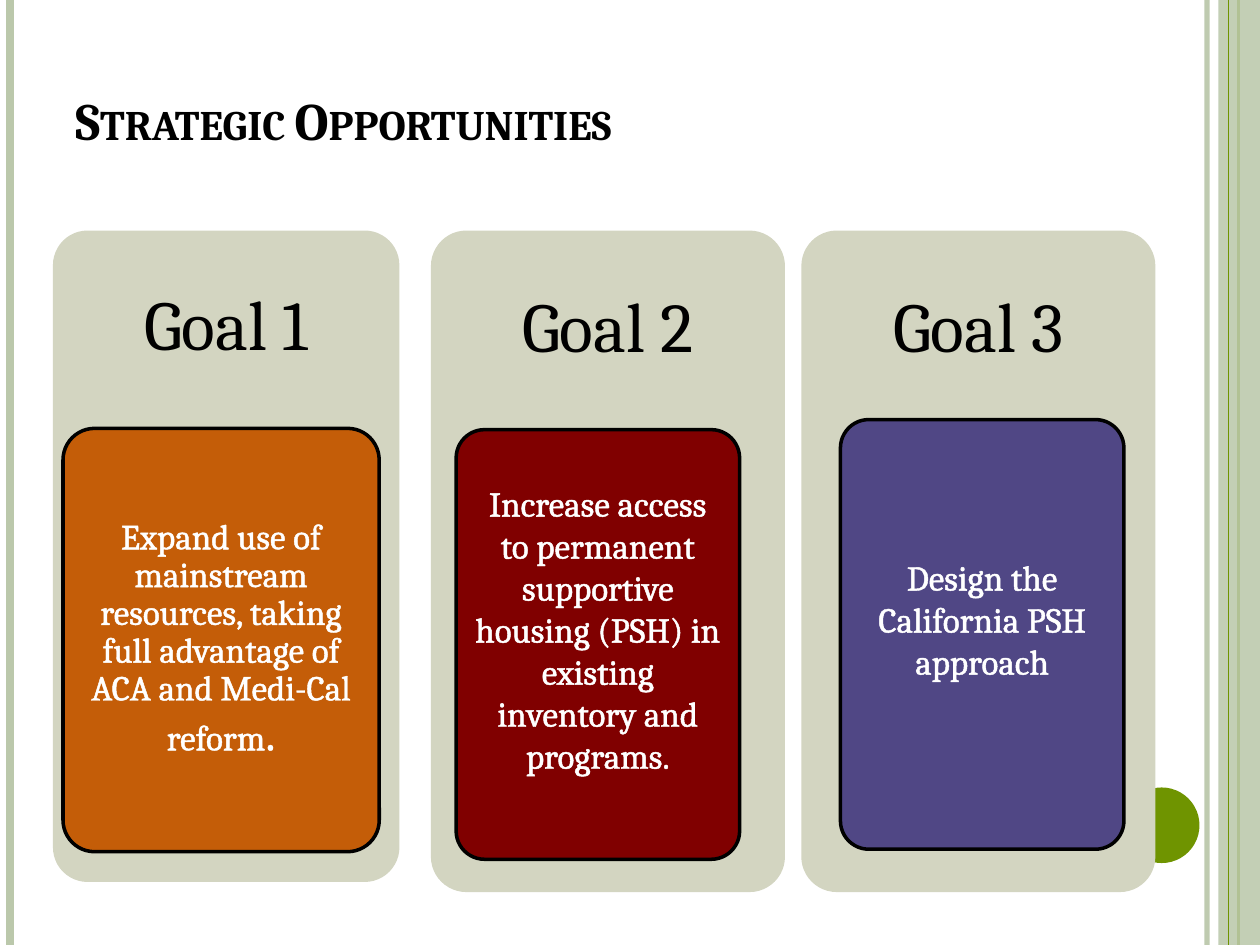
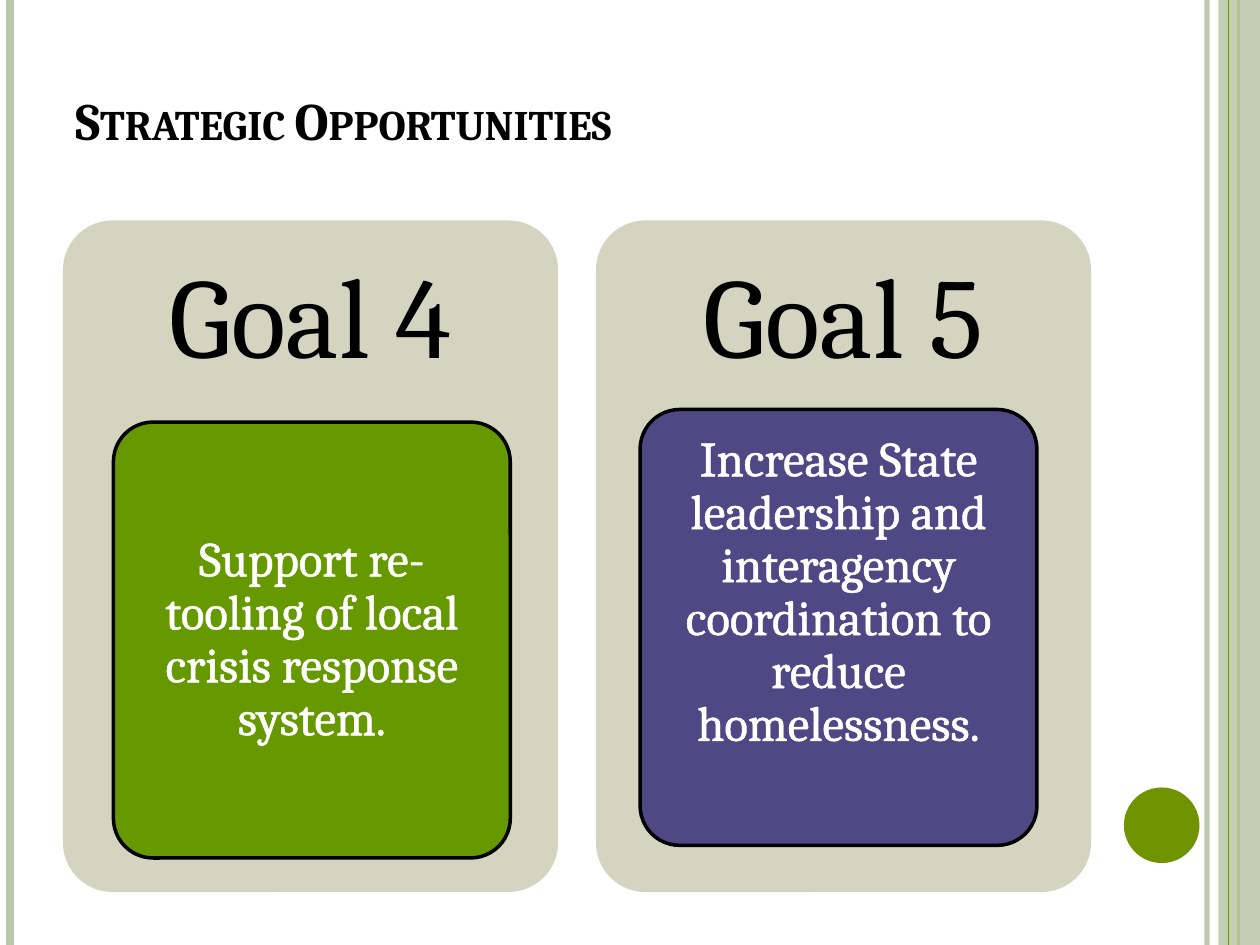
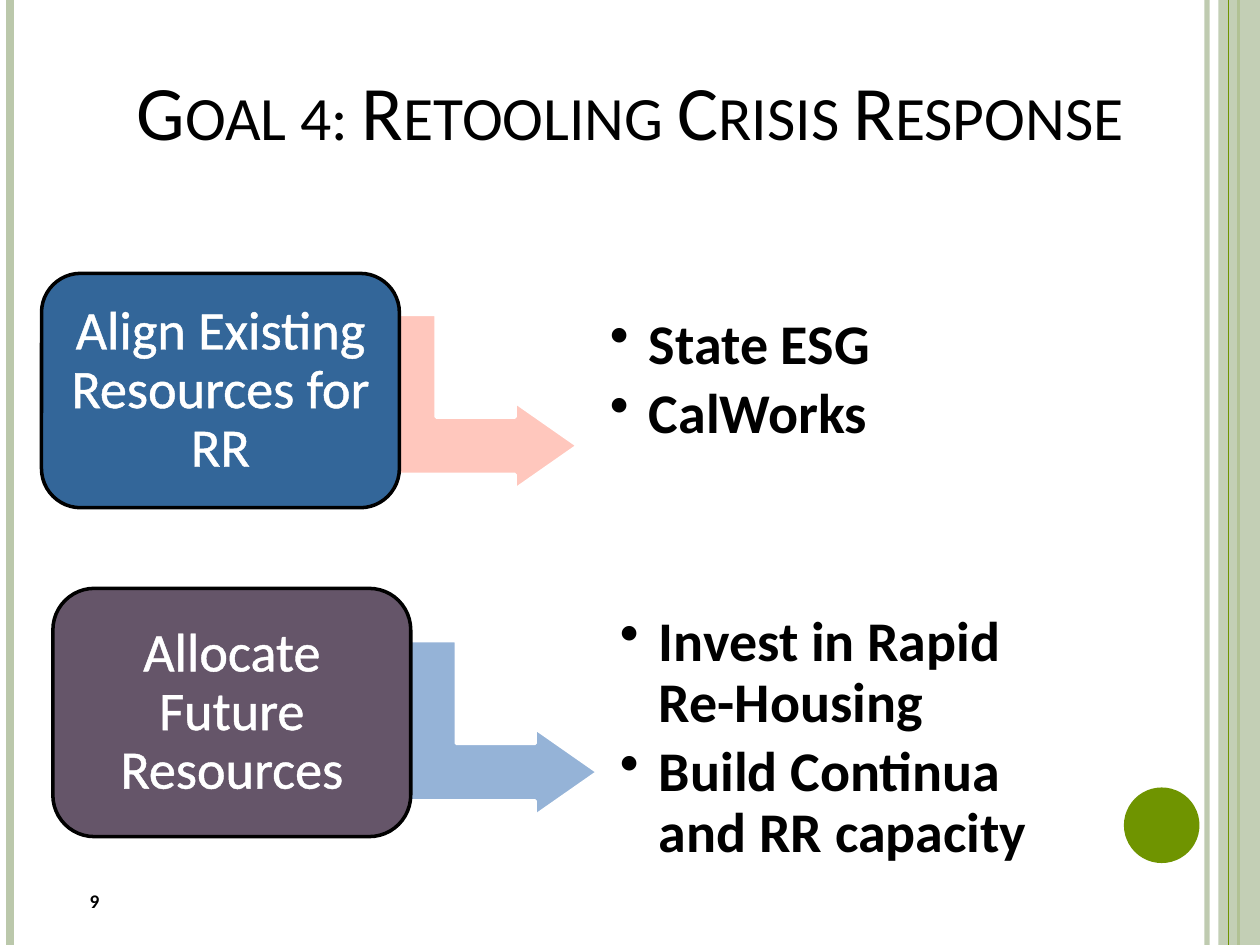
from dataclasses import dataclass

from lxml.etree import SubElement
from pptx import Presentation
from pptx.dml.color import RGBColor
from pptx.enum.shapes import MSO_CONNECTOR, MSO_SHAPE
from pptx.enum.text import MSO_ANCHOR, PP_ALIGN
from pptx.oxml.ns import qn
from pptx.util import Inches, Pt

BLACK = RGBColor(0x00, 0x00, 0x00)
WHITE = RGBColor(0xFF, 0xFF, 0xFF)
SAGE = RGBColor(0xBB, 0xC8, 0xAB)
GREEN = RGBColor(0x6F, 0x94, 0x00)
STONE = RGBColor(0xD3, 0xD5, 0xC1)
ORANGE = RGBColor(0xC4, 0x5D, 0x08)
MAROON = RGBColor(0x80, 0x00, 0x00)
INDIGO = RGBColor(0x50, 0x47, 0x85)
LEAF = RGBColor(0x66, 0x99, 0x00)
BLUE = RGBColor(0x33, 0x66, 0x99)
PLUM = RGBColor(0x65, 0x55, 0x69)
PINK = RGBColor(0xFF, 0xC7, 0xBD)
SKY = RGBColor(0x95, 0xB3, 0xD7)

SERIF = "Cambria"
SANS = "Calibri"


@dataclass
class Style:
    font: str
    size: float
    color: RGBColor = BLACK
    bold: bool = False
    small_caps: bool = False
    outlined: bool = False
    bulleted: bool = False
    align: PP_ALIGN = PP_ALIGN.CENTER
    spacing: float = 1.0
    anchor: MSO_ANCHOR = MSO_ANCHOR.MIDDLE
    insets: tuple = (0.1, 0.05, 0.1, 0.05)


def inches(box):
    return [Inches(value) for value in box]


def set_opacity(properties, percent):
    color = next(properties.iter(qn("a:srgbClr")))
    SubElement(color, qn("a:alpha"), val=str(percent * 1000))


def add_bullet(properties):
    properties.set("marL", str(Inches(0.31)))
    properties.set("indent", str(Inches(-0.31)))
    bullet = properties.makeelement(qn("a:buChar"), {"char": "•"})
    properties.find(qn("a:defRPr")).addprevious(bullet)


def add_outline(characters, color):
    outline = characters.makeelement(qn("a:ln"), {"w": str(Pt(0.75))})
    fill = SubElement(outline, qn("a:solidFill"))
    SubElement(fill, qn("a:srgbClr"), val=str(color))
    characters.insert(0, outline)


def write(frame, lines, style):
    frame.word_wrap = True
    frame.vertical_anchor = style.anchor
    (frame.margin_left, frame.margin_top,
     frame.margin_right, frame.margin_bottom) = inches(style.insets)
    for index, line in enumerate(lines):
        paragraph = frame.add_paragraph() if index else frame.paragraphs[0]
        paragraph.add_run().text = line
        paragraph.alignment = style.align
        paragraph.line_spacing = style.spacing
        font = paragraph.font
        font.name = style.font
        font.size = Pt(style.size)
        font.bold = style.bold
        font.color.rgb = style.color
        properties = paragraph._p.get_or_add_pPr()
        characters = properties.find(qn("a:defRPr"))
        if style.small_caps:
            characters.set("cap", "small")
        if style.outlined:
            add_outline(characters, style.color)
        if style.bulleted:
            paragraph.space_after = Pt(5)
            add_bullet(properties)


def add_text(slide, box, lines, style):
    write(slide.shapes.add_textbox(*inches(box)).text_frame, lines, style)


def add_block(slide, preset, box, fill, line=None, adjustments=()):
    block = slide.shapes.add_shape(preset, *inches(box))
    block.shadow.inherit = False
    block.fill.solid()
    block.fill.fore_color.rgb = fill
    if line is None:
        block.line.fill.background()
    else:
        block.line.color.rgb = line
        block.line.width = Pt(2)
    for index, value in enumerate(adjustments):
        block.adjustments[index] = value
    return block


def add_rule(slide, x, color, width):
    rule = slide.shapes.add_connector(
        MSO_CONNECTOR.STRAIGHT, *inches((x, 0, x, 7.5)))
    rule.line.color.rgb = color
    rule.line.width = Pt(width)
    SubElement(rule._element.spPr, qn("a:effectLst"))
    return rule


def add_framed_slide(deck):
    slide = deck.slides.add_slide(deck.slide_layouts[6])
    inner_rule = add_rule(slide, 9.58, SAGE, 3)
    set_opacity(inner_rule._element.spPr, 93)
    add_rule(slide, 0.08, SAGE, 4.5)
    add_rule(slide, 9.83, GREEN, 1.5)
    band = add_block(slide, MSO_SHAPE.RECTANGLE, (9.67, 0, 0.33, 7.5), SAGE)
    set_opacity(band._element.spPr, 87)
    add_rule(slide, 9.75, GREEN, 0.75)
    add_block(slide, MSO_SHAPE.OVAL, (8.92, 6.25, 0.6, 0.6), GREEN)
    return slide


def add_goals_title(slide):
    add_text(slide, (0.5, 0.3, 8.17, 0.95), ["Strategic Opportunities"],
             Style(SERIF, 30, bold=True, small_caps=True,
                   align=PP_ALIGN.LEFT, anchor=MSO_ANCHOR.BOTTOM))


def add_goal_panel(slide, box, heading, size, inset):
    left, top, width, height = box
    add_block(slide, MSO_SHAPE.ROUNDED_RECTANGLE, box, STONE, adjustments=[0.1])
    add_text(slide, (left, top, width, height * 0.3), [heading],
             Style(SERIF, size, spacing=0.9, insets=(inset,) * 4))


def add_goal_card(slide, box, fill, goal, size, spacing=0.9, lift=0):
    card = add_block(slide, MSO_SHAPE.ROUNDED_RECTANGLE, box, fill, BLACK, [0.1])
    side, end = (0.06, 0.04) if size == 20 else (0.08, 0.06)
    write(card.text_frame, [goal],
          Style(SERIF, size, WHITE, outlined=True, spacing=spacing,
                insets=(side, end, side, end + lift)))
    return card


def add_step(slide, box, fill, label):
    step = add_block(slide, MSO_SHAPE.ROUNDED_RECTANGLE, box, fill, BLACK, [0.167])
    write(step.text_frame, [label],
          Style(SANS, 31, WHITE, outlined=True, spacing=0.9, insets=(0.13,) * 4))


def add_step_arrow(slide, left, top, fill):
    arrow = add_block(slide, MSO_SHAPE.BENT_UP_ARROW, (left, top, 1.39, 1.58),
                      fill, WHITE, [0.328, 0.25, 0.358])
    arrow.rotation = 90


def add_actions(slide, box, actions):
    add_text(slide, box, actions,
             Style(SANS, 32, bold=True, bulleted=True, align=PP_ALIGN.LEFT,
                   spacing=0.9, insets=(0.13,) * 4))


def build_first_goals(deck):
    slide = add_framed_slide(deck)
    add_goals_title(slide)
    panels = [(0.42, 2.75, 5.17), (3.42, 2.81, 5.25), (6.36, 2.81, 5.25)]
    for number, (left, width, height) in enumerate(panels, 1):
        add_goal_panel(slide, (left, 1.83, width, height),
                       f"Goal {number}", 40, 0.17)
    resources = add_goal_card(
        slide, (0.5, 3.4, 2.51, 3.36), ORANGE,
        "Expand use of mainstream resources, taking full advantage of "
        "ACA and Medi-Cal reform", 20)
    full_stop = resources.text_frame.paragraphs[0].add_run()
    full_stop.text = "."
    full_stop.font.size = Pt(28)
    add_goal_card(
        slide, (3.62, 3.41, 2.25, 3.41), MAROON,
        "Increase access to permanent supportive housing (PSH) in existing "
        "inventory and programs.", 20, 1.0, 0.25)
    add_goal_card(slide, (6.67, 3.33, 2.25, 3.41), INDIGO,
                  "Design the California PSH approach", 20, 1.0, 0.25)


def build_last_goals(deck):
    slide = add_framed_slide(deck)
    add_goals_title(slide)
    for number, left in ((4, 0.5), (5, 4.73)):
        add_goal_panel(slide, (left, 1.75, 3.93, 5.33),
                       f"Goal {number}", 65, 0.27)
    add_goal_card(slide, (0.9, 3.35, 3.15, 3.46), LEAF,
                  "Support re-tooling of local crisis response system.", 28)
    add_goal_card(
        slide, (5.08, 3.25, 3.15, 3.46), INDIGO,
        "Increase State leadership and interagency coordination to reduce "
        "homelessness.", 28, lift=0.55)


def build_crisis_response(deck):
    slide = add_framed_slide(deck)
    add_text(slide, (0.5, 6.95, 0.5, 0.4), ["9"], Style(SANS, 11, bold=True))
    add_text(slide, (0, 0.17, 10, 1.12), ["Goal 4: Retooling Crisis Response"],
             Style(SANS, 44, small_caps=True, anchor=MSO_ANCHOR.BOTTOM))
    add_step_arrow(slide, 3.1, 2.4, PINK)
    add_step_arrow(slide, 3.26, 4.99, SKY)
    add_step(slide, (0.33, 2.17, 2.84, 1.86), BLUE,
             "Align Existing Resources for RR")
    add_actions(slide, (4.71, 2.08, 4.53, 1.88), ["State ESG", "CalWorks"])
    add_step(slide, (0.42, 4.67, 2.84, 1.97), PLUM, "Allocate Future Resources")
    add_actions(slide, (4.79, 4.83, 3.83, 2.07),
                ["Invest in Rapid Re-Housing", "Build Continua and RR capacity"])


def main():
    deck = Presentation()
    deck.slide_width = Inches(10)
    deck.slide_height = Inches(7.5)
    build_first_goals(deck)
    build_last_goals(deck)
    build_crisis_response(deck)
    deck.save("out.pptx")


if __name__ == "__main__":
    main()
